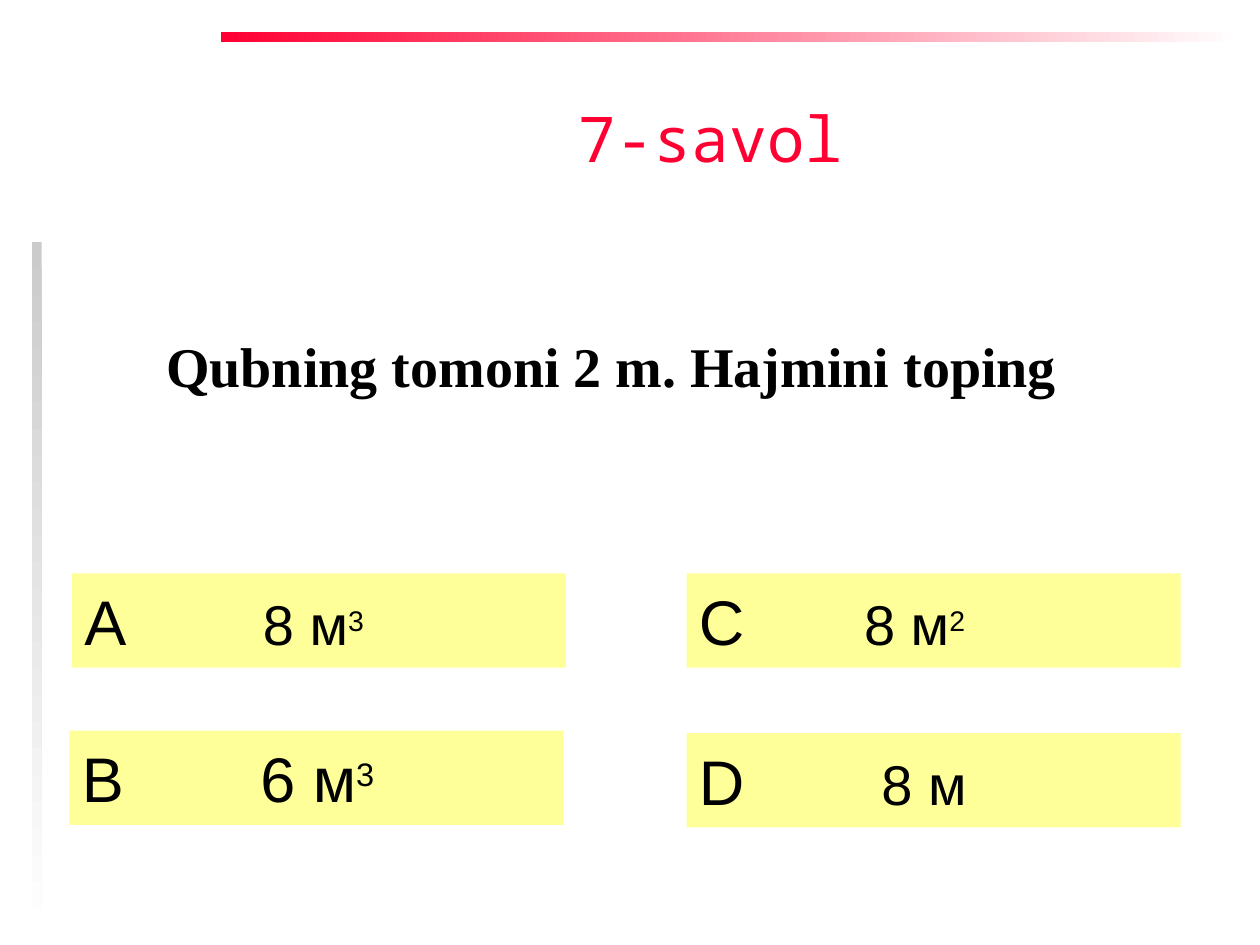
import pptx
import pptx.dml.color
import pptx.enum.shapes
import pptx.enum.text
import pptx.oxml
import pptx.oxml.ns
import pptx.util
from pptx.util import Cm

RED = pptx.dml.color.RGBColor(0xFF, 0x00, 0x33)
GREY = pptx.dml.color.RGBColor(0xCB, 0xCB, 0xCB)
WHITE = pptx.dml.color.RGBColor(0xFF, 0xFF, 0xFF)
BLACK = pptx.dml.color.RGBColor(0x00, 0x00, 0x00)
YELLOW = pptx.dml.color.RGBColor(0xFF, 0xFF, 0x99)


def add_rectangle(slide, left, top, width, height):
    shape = slide.shapes.add_shape(
        pptx.enum.shapes.MSO_SHAPE.RECTANGLE, Cm(left), Cm(top), Cm(width), Cm(height))
    shape.shadow.inherit = False
    shape.line.fill.background()
    return shape


def set_font(paragraph, name, color):
    paragraph.font.name = name
    paragraph.font.color.rgb = color


presentation = pptx.Presentation()
presentation.slide_width = Cm(25.4)
presentation.slide_height = Cm(19.05)
slide = presentation.slides.add_slide(presentation.slide_layouts[5])

bars = [
    (4.45, 0.64, 20.52, 0.2, RED, 0),
    (0.64, 4.88, 0.2, 13.97, GREY, 270),
]
for left, top, width, height, color, angle in bars:
    bar = add_rectangle(slide, left, top, width, height)
    bar.fill.gradient()
    bar.fill.gradient_angle = angle
    for stop, stop_color, position in zip(bar.fill.gradient_stops, (color, WHITE), (0, 1)):
        stop.color.rgb = stop_color
        stop.position = position

title = slide.shapes.title
title.left, title.top, title.width, title.height = Cm(11), Cm(1.88), Cm(6.63), Cm(2.24)
title.text_frame.text = "7-savol"
title.text_frame.word_wrap = False
title.text_frame.vertical_anchor = pptx.enum.text.MSO_ANCHOR.TOP
paragraph = title.text_frame.paragraphs[0]
paragraph.alignment = pptx.enum.text.PP_ALIGN.CENTER
set_font(paragraph, "Noto Sans Mono", RED)
paragraph.font.size = pptx.util.Pt(36)

question = slide.shapes.add_textbox(Cm(2.13), Cm(6.55), Cm(20.4), Cm(3.86))
question.text_frame.word_wrap = True
paragraph = question.text_frame.paragraphs[0]
paragraph.text = "Qubning tomoni 2 m. Hajmini toping"
paragraph.alignment = pptx.enum.text.PP_ALIGN.CENTER
set_font(paragraph, "Times New Roman", BLACK)
paragraph.font.size = pptx.util.Pt(32)
paragraph.font.bold = True

answers = [
    (1.45, 11.56, "А", "8 м", "3", 32, 3.6),
    (1.4, 14.73, "B", "6 м", "3", 36, 3.6),
    (13.84, 11.56, "C", "8 м", "2", 32, 3.33),
    (13.84, 14.78, "D", "8 м", "", 32, 3.68),
]
for left, top, letter, value, power, value_size, tab_position in answers:
    answer = add_rectangle(slide, left, top, 9.96, 1.9)
    answer.fill.solid()
    answer.fill.fore_color.rgb = YELLOW
    answer.text_frame.word_wrap = True
    answer.text_frame.vertical_anchor = pptx.enum.text.MSO_ANCHOR.MIDDLE
    paragraph = answer.text_frame.paragraphs[0]
    paragraph.alignment = pptx.enum.text.PP_ALIGN.LEFT
    tabs = pptx.oxml.parse_xml(
        f'<a:tabLst {pptx.oxml.ns.nsdecls("a")}>'
        f'<a:tab pos="{Cm(tab_position)}" algn="l"/></a:tabLst>')
    paragraph._p.get_or_add_pPr().append(tabs)
    set_font(paragraph, "Arial", BLACK)
    pieces = [(letter + "\t", 36), (value, value_size)]
    if power:
        pieces.append((power, value_size - 4))
    for text, size in pieces:
        run = paragraph.add_run()
        run.text = text
        run.font.size = pptx.util.Pt(size)
    if power:
        run._r.get_or_add_rPr().set("baseline", "30000")

presentation.save("out.pptx")
